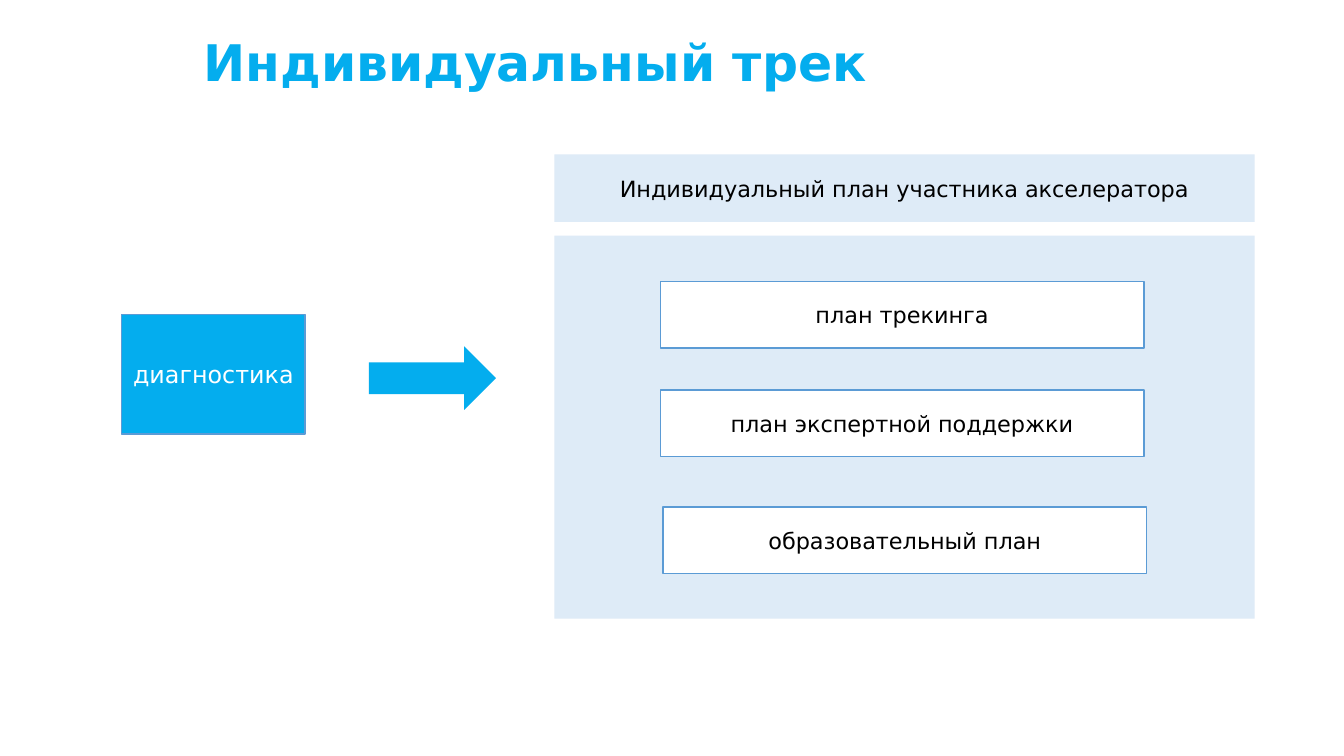
from pptx import Presentation
from pptx.dml.color import RGBColor
from pptx.enum.shapes import MSO_SHAPE as Shape
from pptx.enum.text import MSO_ANCHOR as Anchor, PP_ALIGN as Align
from pptx.util import Cm, Pt

TITLE = "Индивидуальный трек"
DIAGNOSTICS = "диагностика"
PLAN_HEADER = "Индивидуальный план участника акселератора"
PLANS = [
    ("план трекинга", 16.64, 7.09),
    ("план экспертной поддержки", 16.64, 9.83),
    ("образовательный план", 16.71, 12.78),
]

THEME = {
    "font": "DejaVu Sans",
    "accent": RGBColor.from_string("04ADEE"),
    "panel": RGBColor.from_string("DEEBF7"),
    "border": RGBColor.from_string("5B9BD5"),
    "white": RGBColor.from_string("FFFFFF"),
    "black": RGBColor.from_string("000000"),
    "title_size": Pt(36),
    "diagnostics_size": Pt(17),
    "plan_size": Pt(16),
}

PANEL_LEFT, PANEL_WIDTH = 13.97, 17.65
PLAN_WIDTH, PLAN_HEIGHT = 12.19, 1.68


def write(shape, text, size, color, align=Align.CENTER, anchor=Anchor.MIDDLE, bold=False):
    frame = shape.text_frame
    frame.word_wrap = True
    frame.vertical_anchor = anchor
    paragraph = frame.paragraphs[0]
    paragraph.text = text
    paragraph.alignment = align
    font_format = {"name": THEME["font"], "size": THEME[size], "bold": bold}
    for attribute, value in font_format.items():
        setattr(paragraph.font, attribute, value)
    paragraph.font.color.rgb = THEME[color]
    return paragraph


def add_block(slide, kind, box, fill, border=None):
    block = slide.shapes.add_shape(kind, *map(Cm, box))
    block.shadow.inherit = False
    block.fill.solid()
    block.fill.fore_color.rgb = THEME[fill]
    if border:
        block.line.color.rgb = THEME[border]
        block.line.width = Pt(1)
    else:
        block.line.fill.background()
    return block


def main():
    deck = Presentation()
    deck.slide_width, deck.slide_height = Cm(33.87), Cm(19.05)
    slide = deck.slides.add_slide(deck.slide_layouts[6])

    diagnostics = add_block(slide, Shape.RECTANGLE, (3.07, 7.92, 4.62, 3.02), "accent", "border")
    write(diagnostics, DIAGNOSTICS, "diagnostics_size", "white")
    diagnostics.text_frame.margin_left = diagnostics.text_frame.margin_right = Cm(0.1)

    title = slide.shapes.add_textbox(Cm(4.88), Cm(0.76), Cm(25.35), Cm(1.7))
    heading = write(title, TITLE, "title_size", "accent", Align.LEFT, Anchor.BOTTOM, True)
    heading.line_spacing = 0.9

    add_block(slide, Shape.RIGHT_ARROW, (9.3, 8.73, 3.2, 1.6), "accent")
    add_block(slide, Shape.RECTANGLE, (PANEL_LEFT, 5.94, PANEL_WIDTH, 9.65), "panel")

    for plan, left, top in PLANS:
        box = (left, top, PLAN_WIDTH, PLAN_HEIGHT)
        plan_block = add_block(slide, Shape.RECTANGLE, box, "white", "border")
        write(plan_block, plan, "plan_size", "black")

    header = add_block(slide, Shape.RECTANGLE, (PANEL_LEFT, 3.89, PANEL_WIDTH, 1.7), "panel")
    write(header, PLAN_HEADER, "plan_size", "black")

    deck.save("out.pptx")


if __name__ == "__main__":
    main()
